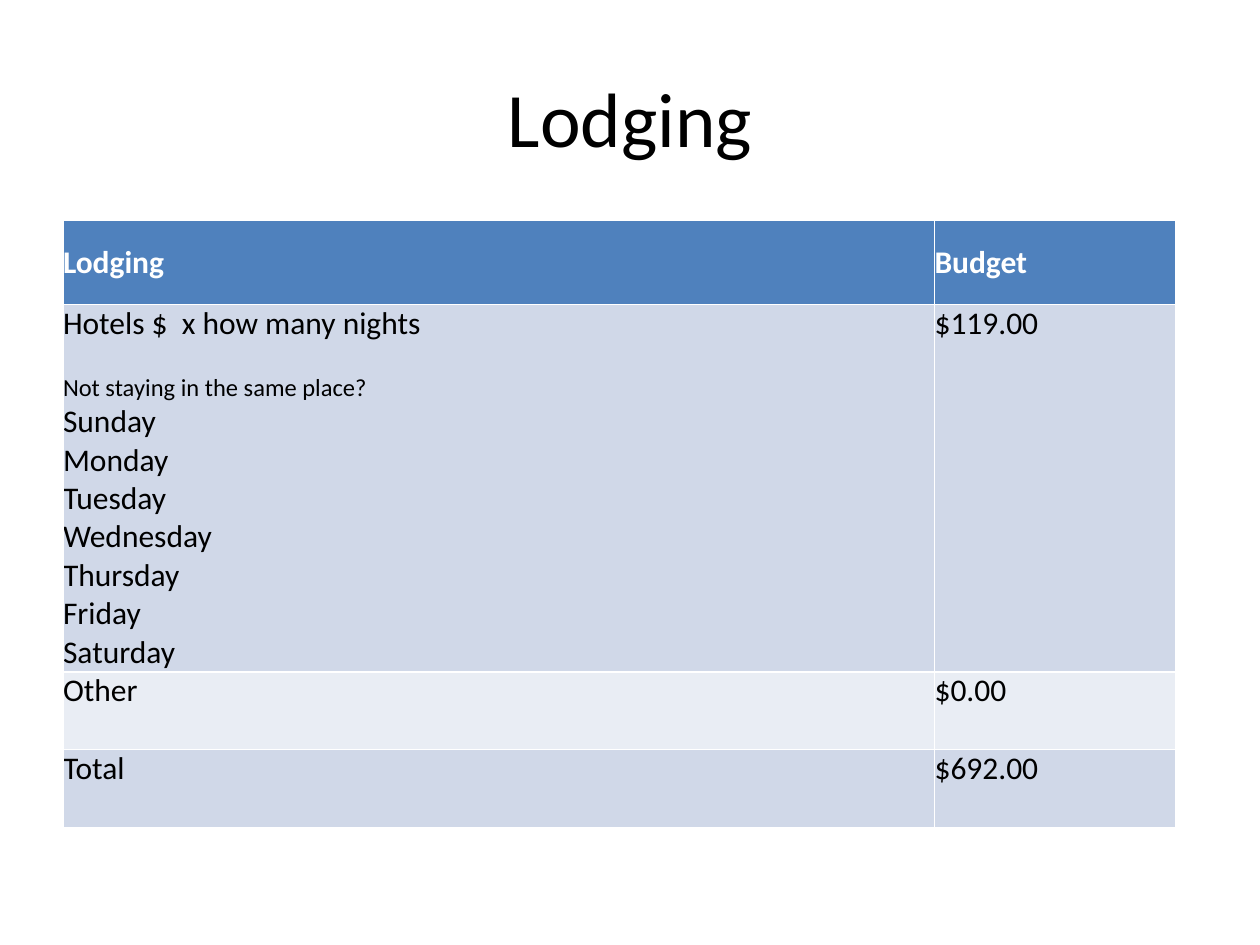
from pptx import Presentation
from pptx.dml.color import RGBColor
from pptx.enum.text import MSO_ANCHOR, PP_ALIGN
from pptx.util import Cm, Pt

MIDDLE, TOP = MSO_ANCHOR.MIDDLE, MSO_ANCHOR.TOP
CENTER = PP_ALIGN.CENTER
WHITE = RGBColor(0xFF, 0xFF, 0xFF)
BLACK = RGBColor(0, 0, 0)
BLUE = RGBColor(0x4F, 0x81, 0xBD)
BANDS = [RGBColor(0xE9, 0xED, 0xF4), RGBColor(0xD0, 0xD8, 0xE8)]
FONT = "Calibri"
NOTE = "Not staying in the same place?"
DAYS = ["Sunday", "Monday", "Tuesday", "Wednesday", "Thursday", "Friday", "Saturday"]
HOTEL = "\n".join(["Hotels $  x how many nights", NOTE] + DAYS)
ROWS = [
    ("Lodging", "Budget"),
    (HOTEL, "$119.00"),
    ("Other", "$0.00"),
    ("Total", "$692.00"),
]
WIDTHS = [17.57, 4.87]
HEIGHTS = [1.69, 7.4, 1.57, 1.57]


def style(para, size, color, bold=False):
    para.font.name = FONT
    para.font.size = Pt(size)
    para.font.color.rgb = color
    para.font.bold = bold


deck = Presentation()
deck.slide_width, deck.slide_height = Cm(25.4), Cm(19.05)
slide = deck.slides.add_slide(deck.slide_layouts[5])

title = slide.shapes.title
title.left, title.top, title.width, title.height = Cm(1.27), Cm(0.76), Cm(22.86), Cm(3.18)
title.text_frame.text = "Lodging"
title.text_frame.vertical_anchor = MIDDLE
head = title.text_frame.paragraphs[0]
head.alignment = CENTER
style(head, 44, BLACK)

frame = slide.shapes.add_table(
    len(ROWS), len(WIDTHS), Cm(1.27), Cm(4.45), Cm(sum(WIDTHS)), Cm(sum(HEIGHTS))
)
table = frame.table
for col, width in zip(table.columns, WIDTHS):
    col.width = Cm(width)

for i, (texts, height) in enumerate(zip(ROWS, HEIGHTS)):
    table.rows[i].height = Cm(height)
    first = i == 0
    for j, text in enumerate(texts):
        cell = table.cell(i, j)
        cell.margin_left = cell.margin_right = cell.margin_top = cell.margin_bottom = 0
        cell.vertical_anchor = MIDDLE if first else TOP
        cell.fill.solid()
        cell.fill.fore_color.rgb = BLUE if first else BANDS[i % 2]
        cell.text_frame.text = text
        for para in cell.text_frame.paragraphs:
            note = para.text == NOTE
            style(para, 14 if note else 18, WHITE if first else BLACK, first)
            if note:
                para.space_before = Pt(17)

deck.save("out.pptx")
